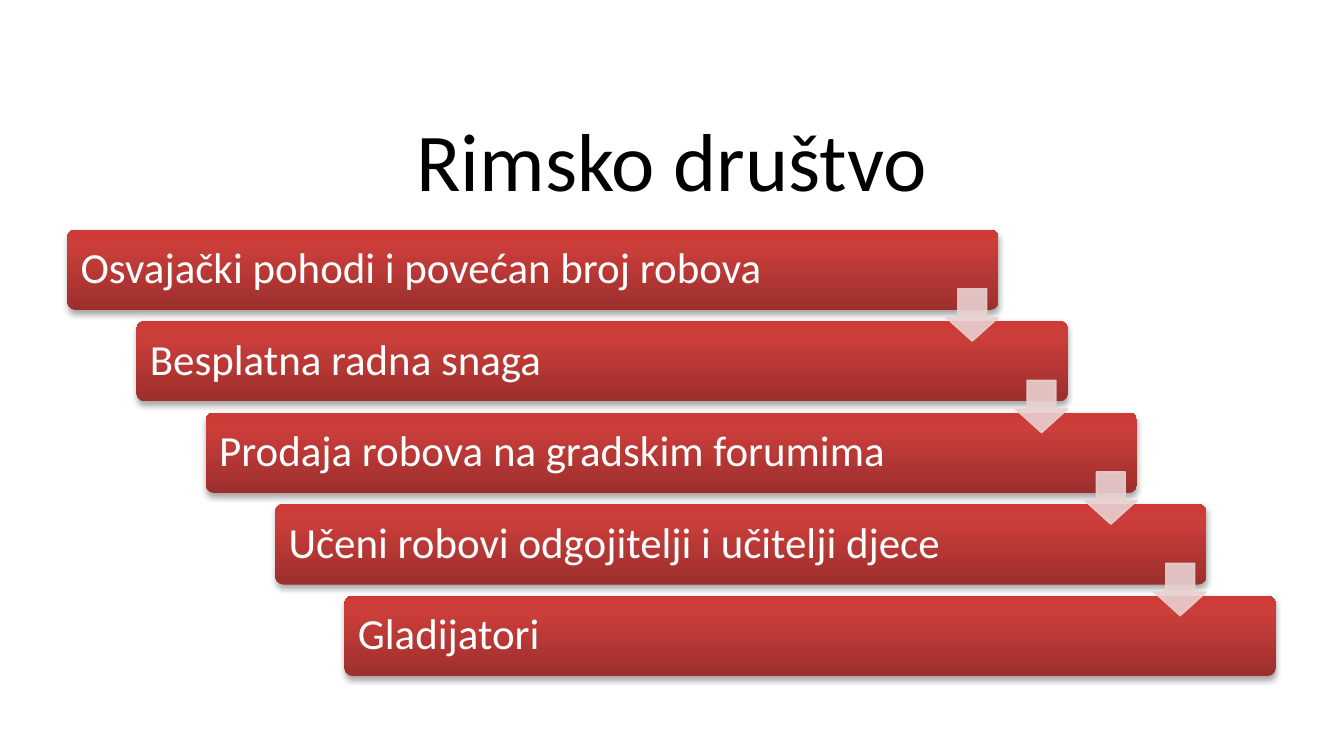
"""Build a slide on Roman society with a descending staircase of five steps."""
from copy import deepcopy

from lxml.etree import SubElement
from pptx import Presentation
from pptx.dml.color import RGBColor
from pptx.enum.shapes import MSO_SHAPE
from pptx.enum.text import MSO_ANCHOR, PP_ALIGN
from pptx.oxml.ns import qn
from pptx.util import Cm, Pt

BLACK = RGBColor(0x00, 0x00, 0x00)
WHITE = RGBColor(0xFF, 0xFF, 0xFF)
PALE_RED = RGBColor(0xE8, 0xD0, 0xD0)
RED_STOPS = [
    (0, RGBColor(0x9C, 0x2F, 0x2D)),
    (0.8, RGBColor(0xCB, 0x3E, 0x3A)),
    (1, RGBColor(0xCE, 0x3B, 0x37)),
]
STEPS = [
    "Osvajački pohodi i povećan broj robova",
    "Besplatna radna snaga",
    "Prodaja robova na gradskim forumima",
    "Učeni robovi odgojitelji i učitelji djece",
    "Gladijatori",
]
STEP_RIGHT = 1.31
STEP_DOWN = 1.73


def write_text(shape, text, size, color, align=PP_ALIGN.LEFT, margin=0.25):
    frame = shape.text_frame
    frame.word_wrap = True
    frame.vertical_anchor = MSO_ANCHOR.MIDDLE
    frame.margin_left = frame.margin_right = Cm(margin)
    para = frame.paragraphs[0]
    para.alignment = align
    para.line_spacing = 0.9
    span = para.add_run()
    span.text = text
    span.font.name = "Calibri"
    span.font.size = Pt(size)
    span.font.color.rgb = color


def set_opacity(container, percent):
    for color in container.iter(qn("a:srgbClr")):
        SubElement(color, qn("a:alpha"), val=str(percent * 1000))


deck = Presentation()
deck.slide_width, deck.slide_height = Cm(25.4), Cm(14.29)
page = deck.slides.add_slide(deck.slide_layouts[5])

title = page.shapes.title
title.left, title.top, title.width, title.height = Cm(1.27), Cm(2.13), Cm(22.86), Cm(1.98)
write_text(title, "Rimsko društvo", size=44, color=BLACK, align=PP_ALIGN.CENTER)

for index, text in enumerate(STEPS):
    bar = page.shapes.add_shape(
        MSO_SHAPE.ROUNDED_RECTANGLE,
        Cm(1.27 + index * STEP_RIGHT), Cm(4.34 + index * STEP_DOWN), Cm(17.6), Cm(1.52),
    )
    bar.adjustments[0] = 0.1
    bar.line.fill.background()
    bar.fill.gradient()
    bar.fill.gradient_angle = 90
    stop_list = bar.element.spPr.find(".//" + qn("a:gsLst"))
    stop_list.append(deepcopy(stop_list[0]))
    for stop, (position, color) in zip(bar.fill.gradient_stops, RED_STOPS):
        stop.position = position
        stop.color.rgb = color
    bar.shadow.inherit = False
    effects = bar.element.spPr.find(qn("a:effectLst"))
    shadow = SubElement(effects, qn("a:outerShdw"), blurRad="40000", dist="23000",
                        dir="5400000", rotWithShape="0")
    SubElement(shadow, qn("a:srgbClr"), val="000000")
    set_opacity(shadow, 35)
    write_text(bar, text, size=23, color=WHITE, margin=0.21)

for index in range(len(STEPS) - 1):
    arrow = page.shapes.add_shape(
        MSO_SHAPE.DOWN_ARROW,
        Cm(17.88 + index * STEP_RIGHT), Cm(5.46 + index * STEP_DOWN), Cm(0.99), Cm(0.99),
    )
    arrow.adjustments[0] = 0.45
    arrow.adjustments[1] = 0.55
    arrow.adjustments[0], arrow.adjustments[1] = 0.55, 0.45
    arrow.fill.solid()
    arrow.fill.fore_color.rgb = PALE_RED
    arrow.line.color.rgb = PALE_RED
    arrow.line.width = Pt(0.75)
    arrow.shadow.inherit = False
    set_opacity(arrow.element.spPr, 90)

deck.save("out.pptx")
